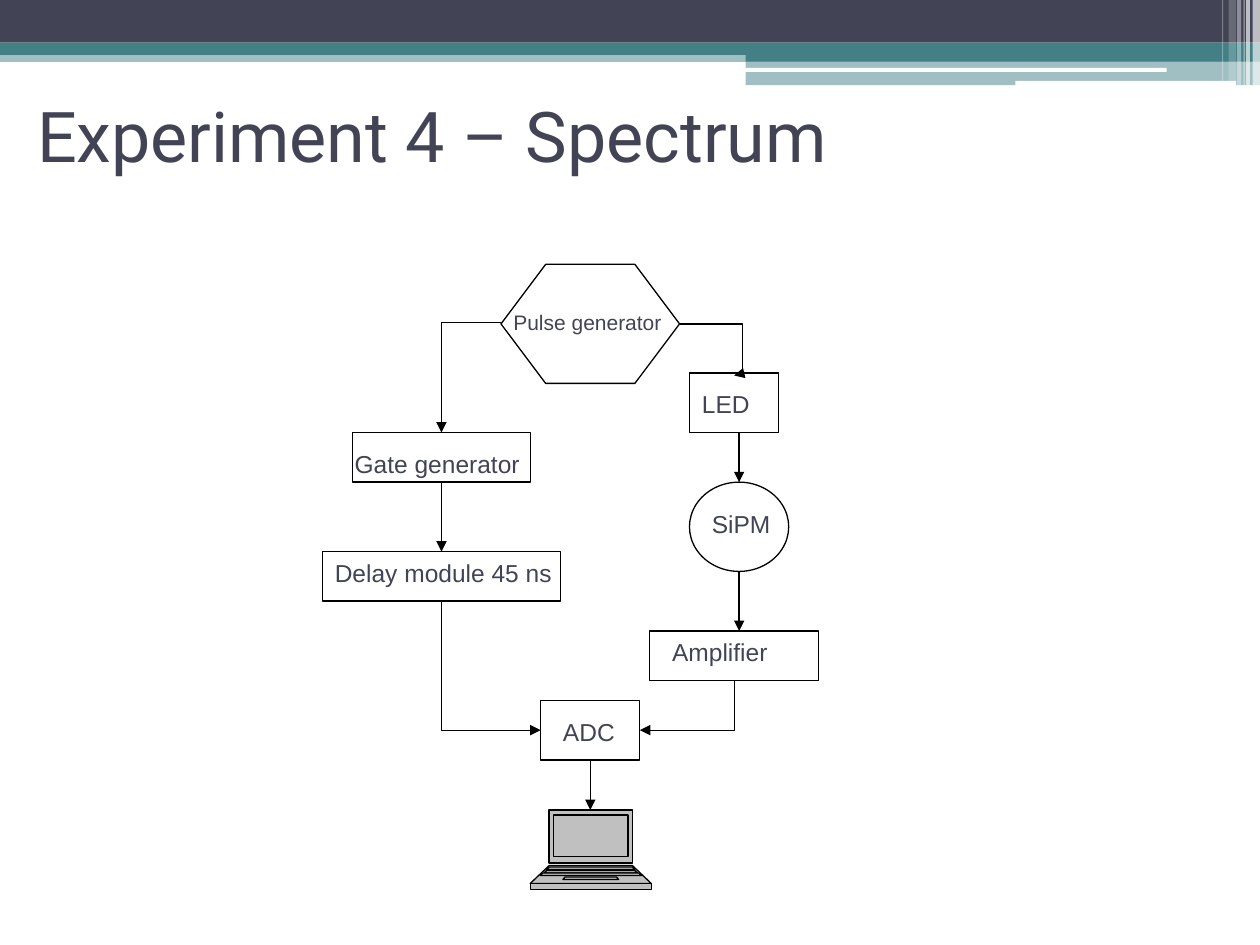
from copy import deepcopy
from dataclasses import dataclass

from pptx import Presentation
from pptx.dml.color import RGBColor
from pptx.enum.shapes import MSO_CONNECTOR, MSO_SHAPE
from pptx.enum.text import MSO_ANCHOR, MSO_AUTO_SIZE
from pptx.oxml.ns import qn
from pptx.oxml.xmlchemy import OxmlElement
from pptx.util import Cm, Pt

RECT, ROUND = MSO_SHAPE.RECTANGLE, MSO_SHAPE.ROUNDED_RECTANGLE
HEXAGON, OVAL = MSO_SHAPE.HEXAGON, MSO_SHAPE.OVAL
STRAIGHT, ELBOW = MSO_CONNECTOR.STRAIGHT, MSO_CONNECTOR.ELBOW
TOP, BOTTOM = 0, 2


@dataclass(frozen=True)
class Theme:
    navy: str = "424456"
    teal: str = "438086"
    white: str = "FFFFFF"
    grey: str = "C0C0C0"
    black: str = "000000"
    title_font: str = "Roboto"
    body_font: str = "Arial"
    title_size: int = 40
    body_size: int = 14
    small_size: int = 12
    line_width: float = 0.75


def add_child(parent, tag, **attrs):
    child = OxmlElement(tag)
    for name, value in attrs.items():
        child.set(name, str(value))
    parent.append(child)
    return child


def write(tf, text, *, font, size, color):
    p = tf.paragraphs[0]
    r = p.add_run()
    r.text = text
    r.font.name = font
    r.font.size = Pt(size)
    r.font.color.rgb = RGBColor.from_string(color)


class Diagram:
    """Draws styled elements on one slide; all lengths are in centimetres."""

    def __init__(self, s, theme):
        self.s = s
        self.theme = theme

    def outline(self, sp):
        sp.line.color.rgb = RGBColor.from_string(self.theme.black)
        sp.line.width = Pt(self.theme.line_width)

    def band(self, x, y, w, h, color, alpha=100, kind=RECT):
        """Borderless bar, alpha in percent."""
        sp = self.s.shapes.add_shape(kind, Cm(x), Cm(y), Cm(w), Cm(h))
        sp.shadow.inherit = False
        sp.fill.solid()
        sp.fill.fore_color.rgb = RGBColor.from_string(color)
        sp.line.fill.background()
        if alpha < 100:
            clr = next(sp._element.spPr.iter(qn("a:srgbClr")))
            add_child(clr, "a:alpha", val=alpha * 1000)

    def node(self, x, y, w, h, kind=RECT):
        sp = self.s.shapes.add_shape(kind, Cm(x), Cm(y), Cm(w), Cm(h))
        sp.shadow.inherit = False
        sp.fill.background()
        self.outline(sp)
        return sp

    def label(self, text, x, y, w, h=0.84, size=None):
        tb = self.s.shapes.add_textbox(Cm(x), Cm(y), Cm(w), Cm(h))
        tf = tb.text_frame
        tf.word_wrap = True
        tf.auto_size = MSO_AUTO_SIZE.SHAPE_TO_FIT_TEXT
        write(tf, text, font=self.theme.body_font,
              size=size or self.theme.body_size, color=self.theme.navy)

    def title(self, text, x, y, w, h):
        tf = self.s.shapes.add_textbox(Cm(x), Cm(y), Cm(w), Cm(h)).text_frame
        tf.word_wrap = True
        tf.vertical_anchor = MSO_ANCHOR.MIDDLE
        write(tf, text, font=self.theme.title_font,
              size=self.theme.title_size, color=self.theme.navy)

    def arrow(self, x1, y1, x2, y2, kind=STRAIGHT):
        c = self.s.shapes.add_connector(kind, Cm(x1), Cm(y1), Cm(x2), Cm(y2))
        self.outline(c)
        sp_pr = c._element.spPr
        add_child(sp_pr.find(qn("a:ln")), "a:tailEnd", type="triangle")
        add_child(sp_pr, "a:effectLst")
        return c

    def corner(self, x1, y1, x2, y2, down_first=False):
        """Arrow with a single bend, leaving sideways or downwards."""
        rot = 0
        if down_first:
            rot = 270 if x2 > x1 else 90
            cx, cy = (x1 + x2) / 2, (y1 + y2) / 2
            a, b = (y2 - y1) / 2, abs(x2 - x1) / 2
            if rot == 270:
                a = -a
            x1, y1, x2, y2 = cx - a, cy - b, cx + a, cy + b
        sp_pr = self.arrow(x1, y1, x2, y2, ELBOW)._element.spPr
        sp_pr.find(qn("a:prstGeom")).set("prst", "bentConnector2")
        if rot:
            sp_pr.find(qn("a:xfrm")).set("rot", str(rot * 60000))

    def hook(self, x1, y1, x2, y2, bend):
        """Three-part arrow; bend is the turning place as a share of its width."""
        geom = self.arrow(x1, y1, x2, y2, ELBOW)._element.spPr.find(qn("a:prstGeom"))
        guides = geom.find(qn("a:avLst"))
        add_child(guides, "a:gd", name="adj1", fmla=f"val {round(bend * 100000)}")

    def laptop(self, axis, parts):
        """One shape of stacked trapezoids: (top, bottom, half top, half bottom)."""
        builder = None
        for top, bottom, half_top, half_bottom in parts:
            start, *rest = [(Cm(axis + dx), Cm(y)) for dx, y in (
                (-half_top, top), (half_top, top),
                (half_bottom, bottom), (-half_bottom, bottom))]
            if builder is None:
                builder = self.s.shapes.build_freeform(*start)
            else:
                builder.move_to(*start)
            builder.add_line_segments(rest, close=True)
        sp = builder.convert_to_shape()
        sp.shadow.inherit = False
        sp.fill.solid()
        sp.fill.fore_color.rgb = RGBColor.from_string(self.theme.grey)
        self.outline(sp)

        # Separate paths keep overlapping parts filled.
        whole = next(sp._element.iter(qn("a:path")))
        steps = len(whole) // len(parts)
        for i in range(len(parts)):
            part = deepcopy(whole)
            part[:] = part[i * steps:(i + 1) * steps]
            whole.addprevious(part)
        whole.getparent().remove(whole)


def draw_header(d):
    t = d.theme
    d.band(0, 1.02, 25.4, 0.23, t.teal, 50)
    d.band(0, 0, 25.4, 0.86, t.navy)
    d.band(0, 0.86, 25.4, 0.25, t.teal)
    d.band(15.03, 0.99, 10.37, 0.25, t.teal)
    d.band(15.03, 1.22, 10.37, 0.5, t.teal, 50)
    d.band(15.02, 1.37, 8.5, 0.08, t.white, kind=ROUND)
    d.band(20.47, 1.63, 4.45, 0.1, t.white, kind=ROUND)
    for x, w, h, alpha in ((25.25, 0.15, 1.73, 65), (25.12, 0.08, 1.73, 65),
                           (25.07, 0.02, 1.73, 60), (24.94, 0.08, 1.73, 40),
                           (24.77, 0.15, 1.63, 20), (24.64, 0.02, 1.63, 30)):
        d.band(x, 0, w, h, t.white, alpha)


def draw_flow(d):
    d.node(10.1, 5.33, 3.6, 2.4, HEXAGON).adjustments[0] = 0.375
    d.node(13.9, 7.52, 1.8, 1.2)
    sipm = d.node(13.9, 9.72, 2, 1.8, OVAL)
    adc = d.node(10.9, 14.12, 2, 1.2)
    d.node(13.1, 12.72, 3.4, 1)
    gate = d.node(7.1, 8.72, 3.6, 1)
    delay = d.node(6.5, 11.12, 4.8, 1)

    d.label("SiPM", 14.1, 10.13, 3.2)
    d.label("Gate generator", 6.9, 8.92, 5)
    d.label("ADC", 11.1, 14.33, 1.6)
    d.label("Amplifier", 13.3, 12.72, 3.4)
    d.label("LED", 13.9, 7.72, 1.8)
    d.label("Pulse generator", 10.1, 6.12, 3.6, 0.76, d.theme.small_size)
    d.label("Delay module 45 ns", 6.5, 11.12, 5)

    d.laptop(11.91, ((16.33, 17.4, 0.84, 0.84), (17.45, 17.81, 0.84, 1.22),
                     (17.81, 17.93, 1.22, 1.22), (16.43, 17.27, 0.75, 0.75),
                     (17.48, 17.53, 0.84, 0.89), (17.68, 17.73, 0.52, 0.56),
                     (17.55, 17.6, 0.89, 0.94), (17.6, 17.65, 0.97, 1.02)))

    d.arrow(11.9, 15.32, 11.9, 16.33).begin_connect(adc, BOTTOM)
    gate_to_delay = d.arrow(8.9, 9.72, 8.9, 11.12)
    gate_to_delay.begin_connect(gate, BOTTOM)
    gate_to_delay.end_connect(delay, TOP)
    d.arrow(14.9, 8.72, 14.9, 9.72).end_connect(sipm, TOP)
    d.arrow(14.9, 11.52, 14.9, 12.72)
    d.hook(13.7, 6.53, 14.8, 7.57, 1.155)
    d.corner(10.1, 6.5, 8.9, 8.72)
    d.corner(8.9, 12.12, 10.9, 14.72, down_first=True)
    d.corner(14.8, 13.72, 12.9, 14.72, down_first=True)


def main():
    prs = Presentation()
    prs.slide_width, prs.slide_height = Cm(25.4), Cm(19.05)
    s = prs.slides.add_slide(prs.slide_layouts[6])
    d = Diagram(s, Theme())
    draw_header(d)
    draw_flow(d)
    d.title("Experiment 4 – Spectrum", 0.5, 1.12, 22.86, 3.18)
    prs.save("out.pptx")


if __name__ == "__main__":
    main()
